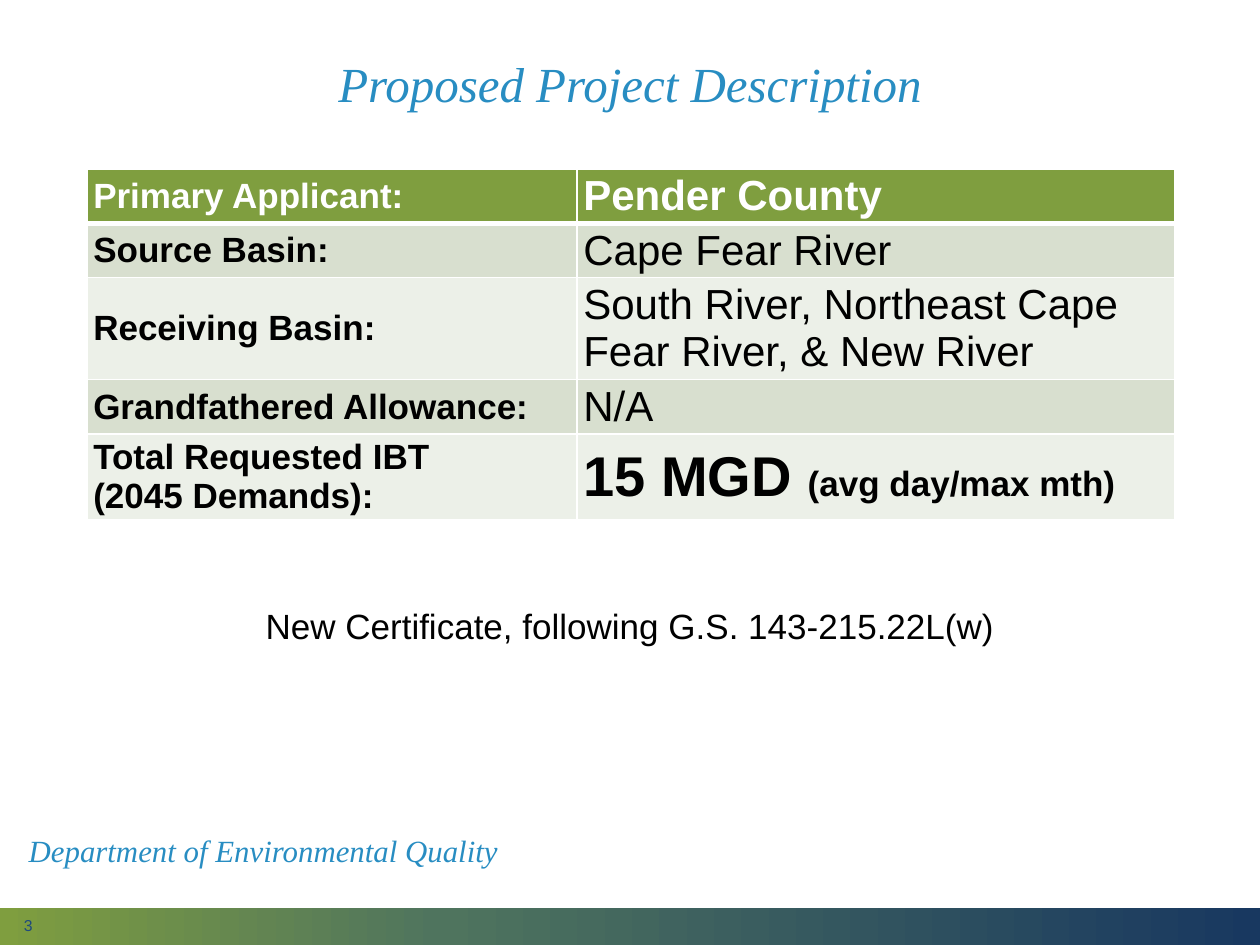
"""Build the project description slide with its table of facts."""
from copy import deepcopy

from lxml import etree
from pptx import Presentation
from pptx.dml.color import RGBColor
from pptx.enum.shapes import MSO_SHAPE
from pptx.enum.text import MSO_ANCHOR, PP_ALIGN
from pptx.oxml.ns import qn
from pptx.util import Inches, Pt

RECT = MSO_SHAPE.RECTANGLE
MIDDLE, TOP = MSO_ANCHOR.MIDDLE, MSO_ANCHOR.TOP
LEFT, CENTER = PP_ALIGN.LEFT, PP_ALIGN.CENTER
SANS, SERIF = "Arial", "Times New Roman"
HEX = {"white": "FFFFFF", "black": "000000", "green": "7F9E3F", "teal": "4F745E",
       "navy": "183860", "blue": "288DC2", "slate": "1F497D",
       "dark": "D8DFCF", "light": "ECF0E8"}

TITLE = "Proposed Project Description"
FACTS = [
    (0.43, ["Primary Applicant:"], [("Pender County", 24, True)]),
    (0.43, ["Source Basin:"], [("Cape Fear River", 24, False)]),
    (0.81, ["Receiving Basin:"],
     [("South River, Northeast Cape Fear River, & New River", 24, False)]),
    (0.43, ["Grandfathered Allowance:"], [("N/A", 24, False)]),
    (0.68, ["Total Requested IBT", "(2045 Demands):"],
     [("15 MGD ", 32, True), ("(avg day/max mth)", 20, True)]),
]
WIDTHS = (3.89, 4.74)
STOPS = [(0, "green"), (0.35, "teal"), (1, "navy")]
NOTES = [
    ("3", (0.09, 7.27, 2.25, 0.15), 9, SANS, "slate", False, LEFT, MIDDLE, 1),
    ("Department of Environmental Quality", (0.13, 6.56, 4.1, 0.41),
     17.6, SERIF, "blue", True, LEFT, MIDDLE, 0.9),
    ("New Certificate, following G.S. 143-215.22L(w)", (0.69, 4.79, 8.62, 0.6),
     20, SANS, "black", False, CENTER, TOP, 0.9),
]


def rgb(name):
    return RGBColor.from_string(HEX[name])


def add_run(para, text, size, face, color, bold=False, slant=False):
    run = para.add_run()
    run.text = text
    font = run.font
    font.size, font.name, font.bold, font.italic = Pt(size), face, bold, slant
    font.color.rgb = rgb(color)


def add_bar(slide):
    bar = slide.shapes.add_shape(RECT, 0, Inches(7.21), Inches(10), Inches(0.29))
    bar.shadow.inherit = False
    bar.line.fill.background()
    bar.fill.gradient()
    bar.fill.gradient_angle = 0
    stops = bar._element.spPr.find(qn("a:gradFill")).find(qn("a:gsLst"))
    stops.append(deepcopy(stops[0]))
    for stop, (pos, name) in zip(bar.fill.gradient_stops, STOPS):
        stop.position = pos
        stop.color.rgb = rgb(name)


def set_title(slide):
    title = slide.shapes.title
    title.left, title.top = Inches(0.69), Inches(0.11)
    title.width, title.height = Inches(8.62), Inches(1.16)
    title.text_frame.vertical_anchor = MIDDLE
    para = title.text_frame.paragraphs[0]
    para.alignment, para.line_spacing = CENTER, 0.9
    add_run(para, TITLE, 28, SERIF, "blue", slant=True)


def add_note(slide, text, box, size, face, color, slant, align, anchor, space):
    frame = slide.shapes.add_textbox(*map(Inches, box)).text_frame
    frame.word_wrap = True
    frame.vertical_anchor = anchor
    para = frame.paragraphs[0]
    para.alignment, para.line_spacing = align, space
    add_run(para, text, size, face, color, slant=slant)


def set_edge(cell, side, width):
    edge = etree.SubElement(cell._tc.get_or_add_tcPr(), qn(f"a:{side}"), w=str(Pt(width)))
    fill = etree.SubElement(edge, qn("a:solidFill"))
    etree.SubElement(fill, qn("a:srgbClr"), val=HEX["white"])


def style_cell(cell, row):
    for side in ("lnL", "lnR", "lnT", "lnB"):
        thick = (row, side) in ((0, "lnB"), (1, "lnT"))
        set_edge(cell, side, 3 if thick else 1)
    cell.fill.solid()
    cell.fill.fore_color.rgb = rgb("green" if row == 0 else ("light", "dark")[row % 2])
    cell.vertical_anchor = MIDDLE
    cell.margin_left = cell.margin_right = Inches(0.05)
    cell.margin_top = cell.margin_bottom = Inches(0.03)


def add_facts(slide):
    high = sum(fact[0] for fact in FACTS)
    table = slide.shapes.add_table(
        len(FACTS), len(WIDTHS), Inches(0.69), Inches(1.34),
        Inches(sum(WIDTHS)), Inches(high)).table
    for col, width in zip(table.columns, WIDTHS):
        col.width = Inches(width)
    for row, (tall, label, value) in enumerate(FACTS):
        table.rows[row].height = Inches(tall)
        color = "black" if row else "white"
        cells = [[[(line, 20, True)] for line in label], [value]]
        for col, lines in enumerate(cells):
            cell = table.cell(row, col)
            style_cell(cell, row)
            frame = cell.text_frame
            for num, runs in enumerate(lines):
                para = frame.add_paragraph() if num else frame.paragraphs[0]
                for text, size, bold in runs:
                    add_run(para, text, size, SANS, color, bold)


def main():
    deck = Presentation()
    deck.slide_width, deck.slide_height = Inches(10), Inches(7.5)
    slide = deck.slides.add_slide(deck.slide_layouts[5])
    add_bar(slide)
    set_title(slide)
    add_facts(slide)
    for note in NOTES:
        add_note(slide, *note)
    deck.save("out.pptx")


if __name__ == "__main__":
    main()
